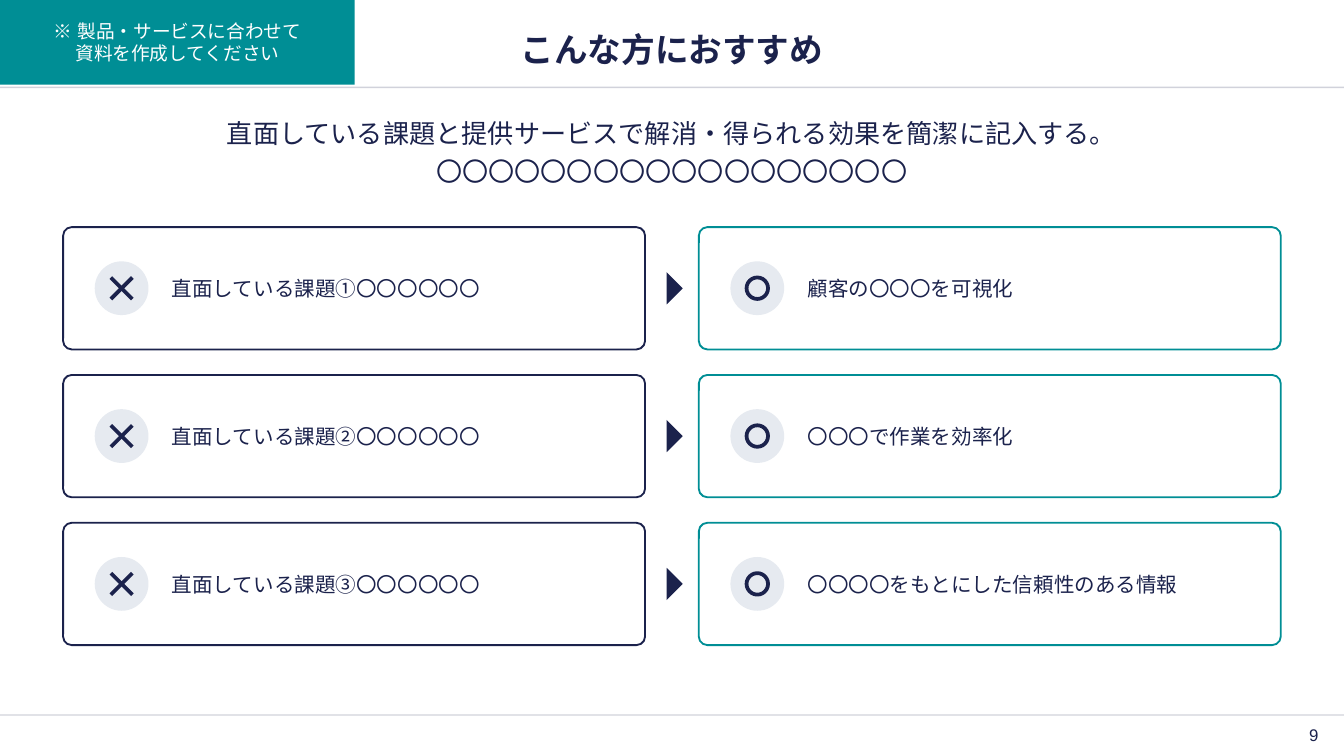
import pptx
import pptx.util
import pptx.dml.color
import pptx.enum.shapes
import pptx.enum.text
import pptx.oxml
import pptx.oxml.ns

Inches = pptx.util.Inches
Pt = pptx.util.Pt
RGBColor = pptx.dml.color.RGBColor
SHAPE = pptx.enum.shapes.MSO_SHAPE
ANCHOR = pptx.enum.text.MSO_ANCHOR
ALIGN = pptx.enum.text.PP_ALIGN

NAVY = RGBColor(0x1B, 0x22, 0x4C)
TEAL = RGBColor(0x00, 0x8E, 0x95)
PALE = RGBColor(0xE6, 0xEA, 0xF0)
WHITE = RGBColor(0xFF, 0xFF, 0xFF)
FONT = "Arial"

# Grid, in inches
WIDTH, HEIGHT = 10, 5.625
MARGIN = 0.47
CONTENT_WIDTH = WIDTH - 2 * MARGIN
CARD_WIDTH, CARD_HEIGHT = 4.33, 0.91
CARD_TOP, ROW_STEP = 1.69, 1.1
EFFECT_LEFT = WIDTH - MARGIN - CARD_WIDTH
ICON_SIZE, MARK_SIZE = 0.4, 0.16
ICON_INDENT = 0.235
ARROW_WIDTH, ARROW_HEIGHT = 0.24, 0.12
ARROW_CENTER = 5.02

ROWS = [
    ("直面している課題①〇〇〇〇〇〇", "顧客の〇〇〇を可視化"),
    ("直面している課題②〇〇〇〇〇〇", "〇〇〇で作業を効率化"),
    ("直面している課題③〇〇〇〇〇〇", "〇〇〇〇をもとにした信頼性のある情報"),
]


def write_text(shape, lines, size, color=NAVY, align=ALIGN.CENTER, bold=False,
               anchor=ANCHOR.MIDDLE, inset=0.04, left_inset=0.04, space_after=0):
    frame = shape.text_frame
    frame.word_wrap = True
    frame.vertical_anchor = anchor
    frame.margin_left = Inches(left_inset)
    frame.margin_top = frame.margin_right = frame.margin_bottom = Inches(inset)
    for index, line in enumerate(lines):
        paragraph = frame.paragraphs[0] if index == 0 else frame.add_paragraph()
        paragraph.alignment = align
        paragraph.space_after = Pt(space_after)
        run = paragraph.add_run()
        run.text = line
        run.font.name = FONT
        run.font.size = Pt(size)
        run.font.bold = bold
        run.font.color.rgb = color
        # East Asian typeface
        typeface = pptx.oxml.parse_xml(
            f'<a:ea {pptx.oxml.ns.nsdecls("a")} typeface="{FONT}"/>')
        run.font._element.find(pptx.oxml.ns.qn("a:latin")).addnext(typeface)


def add_text(slide, box, lines, size, **style):
    write_text(slide.shapes.add_textbox(*map(Inches, box)), lines, size, **style)


def add_panel(shapes, kind, box, fill=None, line=None, line_width=1):
    shape = shapes.add_shape(kind, *map(Inches, box))
    shape.shadow.inherit = False
    if fill is None:
        shape.fill.background()
    else:
        shape.fill.solid()
        shape.fill.fore_color.rgb = fill
    if line is None:
        shape.line.fill.background()
    else:
        shape.line.color.rgb = line
        shape.line.width = Pt(line_width)
    return shape


def add_line(shapes, start, end, width, opacity=100):
    line = shapes.add_connector(pptx.enum.shapes.MSO_CONNECTOR.STRAIGHT,
                                *map(Inches, (*start, *end)))
    line.line.color.rgb = NAVY
    line.line.width = Pt(width)
    properties = line._element.spPr
    namespace = pptx.oxml.ns.nsdecls("a")
    properties.append(pptx.oxml.parse_xml(f"<a:effectLst {namespace}/>"))
    if opacity < 100:
        color = properties.find(".//" + pptx.oxml.ns.qn("a:srgbClr"))
        color.append(pptx.oxml.parse_xml(
            f'<a:alpha {namespace} val="{opacity * 1000}"/>'))


def add_icon(slide, left, top, is_cross):
    shapes = slide.shapes.add_group_shape().shapes
    add_panel(shapes, SHAPE.OVAL, (left, top, ICON_SIZE, ICON_SIZE), PALE)
    inset = (ICON_SIZE - MARK_SIZE) / 2
    x, y = left + inset, top + inset
    if is_cross:
        right, bottom = x + MARK_SIZE, y + MARK_SIZE
        add_line(shapes, (x, y), (right, bottom), 2)
        add_line(shapes, (right, y), (x, bottom), 2)
    else:
        add_panel(shapes, SHAPE.OVAL, (x, y, MARK_SIZE, MARK_SIZE),
                  line=NAVY, line_width=2)


def add_card(slide, left, top, text, line, is_cross):
    card = add_panel(slide.shapes, SHAPE.ROUNDED_RECTANGLE,
                     (left, top, CARD_WIDTH, CARD_HEIGHT), WHITE, line)
    card.adjustments[0] = 0.07
    write_text(card, [text], 11, align=ALIGN.LEFT, inset=0.08, left_inset=0.79)
    add_icon(slide, left + ICON_INDENT, top + (CARD_HEIGHT - ICON_SIZE) / 2, is_cross)


def add_arrow(slide, middle):
    arrow = add_panel(slide.shapes, SHAPE.ISOSCELES_TRIANGLE,
                      (ARROW_CENTER - ARROW_WIDTH / 2, middle - ARROW_HEIGHT / 2,
                       ARROW_WIDTH, ARROW_HEIGHT), NAVY)
    arrow.rotation = 90


def main():
    presentation = pptx.Presentation()
    presentation.slide_width = Inches(WIDTH)
    presentation.slide_height = Inches(HEIGHT)
    slide = presentation.slides.add_slide(presentation.slide_layouts[6])

    # Header and footer rules
    for y in (0.65, 5.32):
        add_line(slide.shapes, (0, y), (WIDTH, y), 0.75, opacity=20)

    # Title, lead text and page number
    add_text(slide, (MARGIN, 0.17, CONTENT_WIDTH, 0.39),
             ["こんな方におすすめ"], 18, bold=True)
    add_text(slide, (MARGIN, 0.83, CONTENT_WIDTH, 0.63),
             ["直面している課題と提供サービスで解消・得られる効果を簡潔に記入する。",
              "〇〇〇〇〇〇〇〇〇〇〇〇〇〇〇〇〇〇"],
             14, anchor=ANCHOR.TOP, space_after=4)
    add_text(slide, (9.46, 5.37, 0.39, 0.2), ["9"], 9, align=ALIGN.RIGHT)

    # Problem and effect pairs
    for row, (problem, effect) in enumerate(ROWS):
        top = CARD_TOP + row * ROW_STEP
        add_card(slide, MARGIN, top, problem, NAVY, is_cross=True)
        add_card(slide, EFFECT_LEFT, top, effect, TEAL, is_cross=False)
        add_arrow(slide, top + CARD_HEIGHT / 2)

    # Corner note
    note = add_panel(slide.shapes, SHAPE.RECTANGLE, (0, 0, 2.64, 0.63), TEAL)
    write_text(note, ["※ 製品・サービスに合わせて", "資料を作成してください"], 10, color=WHITE)

    presentation.save("out.pptx")


if __name__ == "__main__":
    main()
